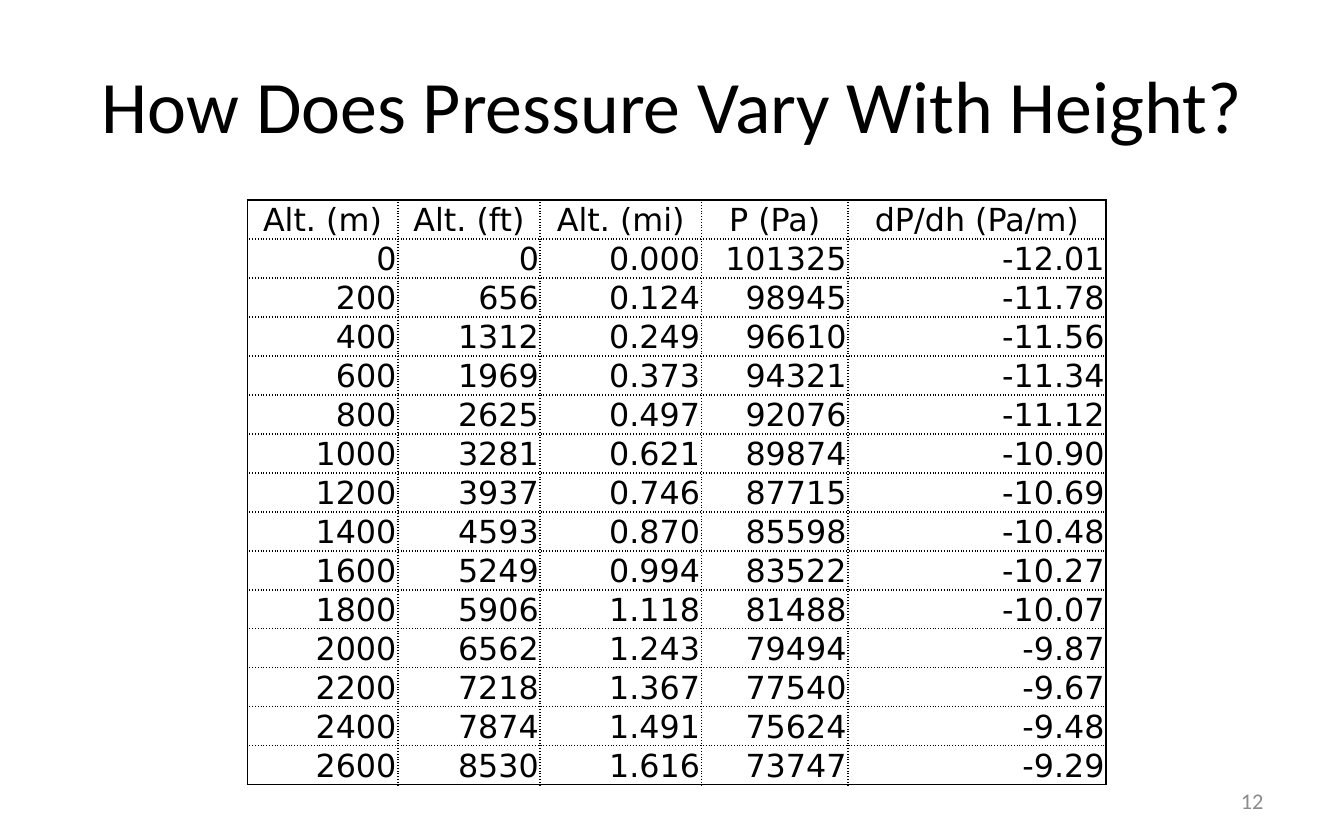
from lxml import etree
from pptx import Presentation
from pptx.dml.color import RGBColor
from pptx.enum.text import MSO_ANCHOR, PP_ALIGN
from pptx.oxml.ns import qn
from pptx.util import Inches, Pt

CENTER, RIGHT = PP_ALIGN.CENTER, PP_ALIGN.RIGHT
MIDDLE, BOTTOM = MSO_ANCHOR.MIDDLE, MSO_ANCHOR.BOTTOM
BLACK = RGBColor(0x00, 0x00, 0x00)
GRAY = RGBColor(0x8C, 0x8C, 0x8C)
TITLE_ONLY = 5

TITLE = "How Does Pressure Vary With Height?"
PAGE_NUMBER = "12"
HEADER = ("Alt. (m)", "Alt. (ft)", "Alt. (mi)", "P (Pa)", "dP/dh (Pa/m)")
READINGS = [
    ("0", "0", "0.000", "101325", "-12.01"),
    ("200", "656", "0.124", "98945", "-11.78"),
    ("400", "1312", "0.249", "96610", "-11.56"),
    ("600", "1969", "0.373", "94321", "-11.34"),
    ("800", "2625", "0.497", "92076", "-11.12"),
    ("1000", "3281", "0.621", "89874", "-10.90"),
    ("1200", "3937", "0.746", "87715", "-10.69"),
    ("1400", "4593", "0.870", "85598", "-10.48"),
    ("1600", "5249", "0.994", "83522", "-10.27"),
    ("1800", "5906", "1.118", "81488", "-10.07"),
    ("2000", "6562", "1.243", "79494", "-9.87"),
    ("2200", "7218", "1.367", "77540", "-9.67"),
    ("2400", "7874", "1.491", "75624", "-9.48"),
    ("2600", "8530", "1.616", "73747", "-9.29"),
]
COLUMN_WIDTHS = (1.12, 1.06, 1.2, 1.09, 1.92)
ROW_HEIGHT = 0.29
TABLE_LEFT, TABLE_TOP = 1.84, 1.49


def write_text(frame, text, *, size, font="Calibri", color=BLACK, align=CENTER):
    paragraph = frame.paragraphs[0]
    paragraph.alignment = align
    run = paragraph.add_run()
    run.text = text
    run.font.size = Pt(size)
    run.font.name = font
    run.font.color.rgb = color


def draw_borders(cell, outer_sides):
    """Draw solid lines on the outer sides and dotted lines on the others."""
    properties = cell._tc.get_or_add_tcPr()
    for side in "LRTB":
        line = etree.SubElement(properties, qn(f"a:ln{side}"), w=str(Pt(1)))
        fill = etree.SubElement(line, qn("a:solidFill"))
        etree.SubElement(fill, qn("a:srgbClr"), val=str(BLACK))
        dash = "solid" if side in outer_sides else "sysDot"
        etree.SubElement(line, qn("a:prstDash"), val=dash)


def add_pressure_table(slide):
    rows = [HEADER, *READINGS]
    last_row, last_column = len(rows) - 1, len(HEADER) - 1
    table = slide.shapes.add_table(
        len(rows), len(HEADER), Inches(TABLE_LEFT), Inches(TABLE_TOP),
        Inches(sum(COLUMN_WIDTHS)), Inches(ROW_HEIGHT * len(rows))).table
    table.first_row = table.horz_banding = False
    for column, width in zip(table.columns, COLUMN_WIDTHS):
        column.width = Inches(width)
    for r, values in enumerate(rows):
        table.rows[r].height = Inches(ROW_HEIGHT)
        for c, value in enumerate(values):
            cell = table.cell(r, c)
            cell.margin_left = cell.margin_right = cell.margin_top = Inches(0.01)
            cell.margin_bottom = 0
            cell.vertical_anchor = BOTTOM
            write_text(cell.text_frame, value, size=17, font="DejaVu Sans",
                       align=CENTER if r == 0 else RIGHT)
            outer = {"L": c == 0, "R": c == last_column,
                     "T": r == 0, "B": r == last_row}
            draw_borders(cell, [side for side, is_outer in outer.items() if is_outer])
            cell.fill.background()


def main():
    deck = Presentation()
    deck.slide_width, deck.slide_height = Inches(10), Inches(6.25)
    slide = deck.slides.add_slide(deck.slide_layouts[TITLE_ONLY])

    title = slide.shapes.title
    title.left, title.top = Inches(0.5), Inches(0.25)
    title.width, title.height = Inches(9), Inches(1.04)
    title.text_frame.vertical_anchor = MIDDLE
    write_text(title.text_frame, TITLE, size=39.6)

    add_pressure_table(slide)

    page = slide.shapes.add_textbox(
        Inches(7.17), Inches(5.79), Inches(2.33), Inches(0.33)).text_frame
    page.word_wrap = True
    page.vertical_anchor = MIDDLE
    write_text(page, PAGE_NUMBER, size=12, color=GRAY, align=RIGHT)

    deck.save("out.pptx")


if __name__ == "__main__":
    main()
